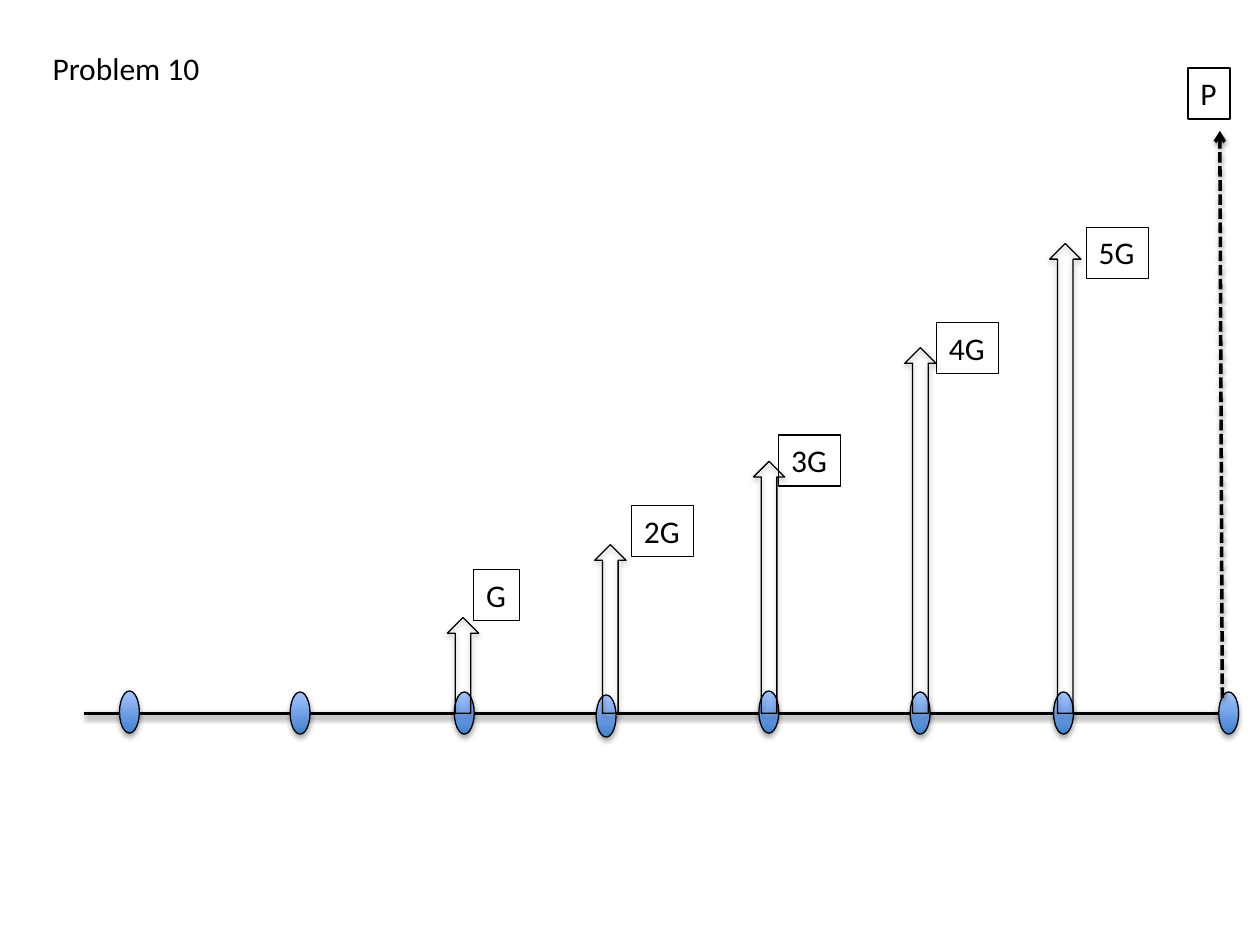
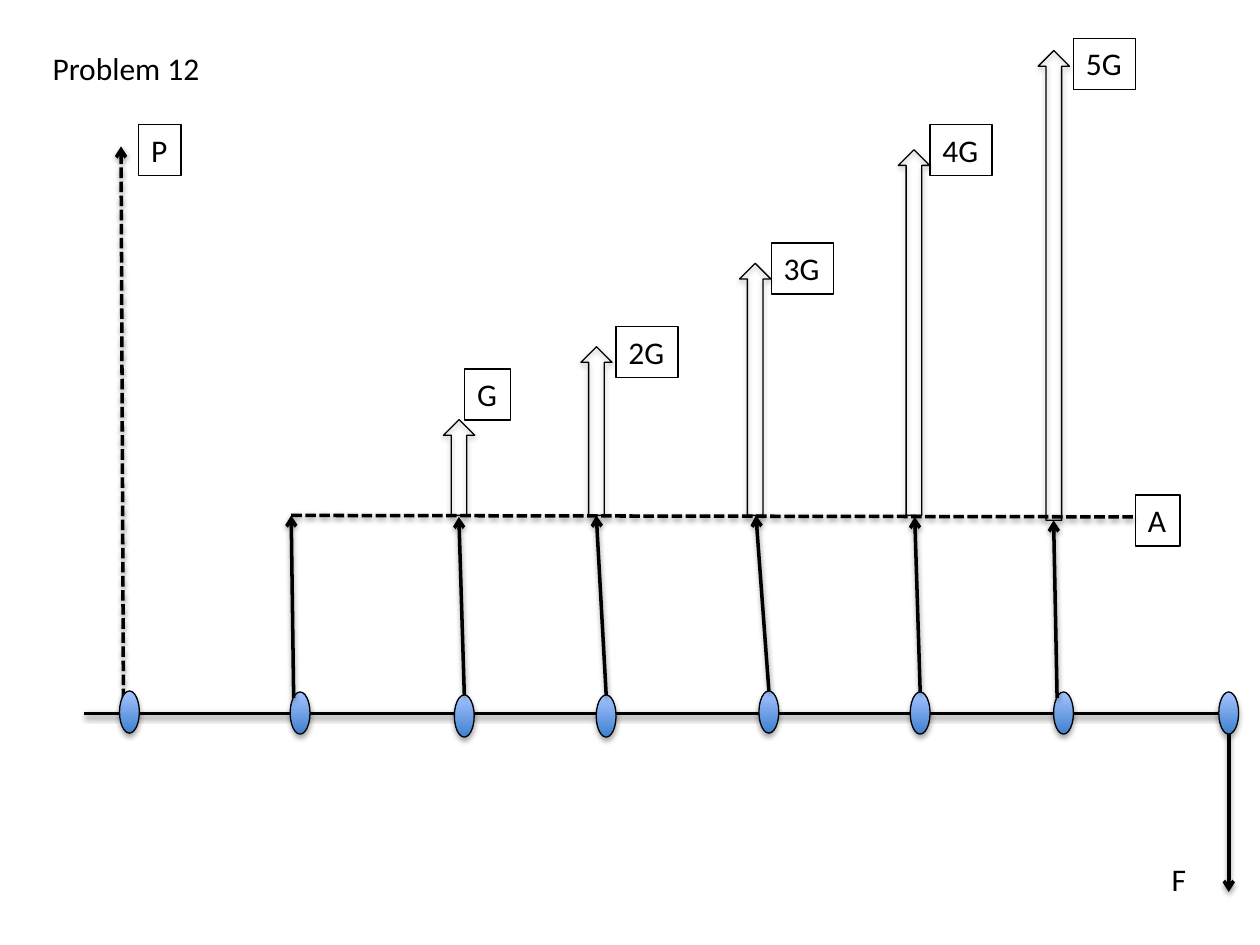
from collections import namedtuple

from lxml import etree
from pptx import Presentation
from pptx.dml.color import RGBColor
from pptx.enum.dml import MSO_LINE
from pptx.enum.shapes import MSO_CONNECTOR, MSO_SHAPE
from pptx.enum.text import MSO_AUTO_SIZE
from pptx.oxml.ns import qn
from pptx.util import Cm, Pt

COLORS = {"ink": "000000", "node_dark": "3F80CE", "node_light": "A4C4FF"}
FONT = "Calibri"
STRAIGHT = MSO_CONNECTOR.STRAIGHT
OVAL, UP_ARROW = MSO_SHAPE.OVAL, MSO_SHAPE.UP_ARROW
DASH = MSO_LINE.SQUARE_DOT
FIT_SHAPE = MSO_AUTO_SIZE.SHAPE_TO_FIT_TEXT
TOP = 0

Box = namedtuple("Box", "x y w h")

TITLE_BOX = Box(0.81, 0.86, 3.51, 1.03)
TIMELINE_BOX = Box(1.7, 13.93, 23.06, 0.85)
NODE_WIDTH = 0.4
NODE_CENTERS = (0.91, 4.35, 7.66, 10.52, 13.8, 16.85, 19.74, 23.07)
LABEL_HEIGHT = 1.03
LABEL_WIDTHS = {"P": 0.85, "G": 0.93, "A": 0.9, "F": 0.81}
MULTIPLE_WIDTH = 1.25
GRADIENT_HEIGHTS = (1.93, 3.4, 5.08, 7.37, 9.47)
GRADIENT_WIDTH = 0.63


def rgb(name):
    """Return a named colour."""
    return RGBColor.from_string(COLORS[name])


def add_shadow(shape, alpha, distance):
    """Give a shape a soft shadow below it."""
    effects = etree.SubElement(shape._element.spPr, qn("a:effectLst"))
    shadow = etree.SubElement(
        effects, qn("a:outerShdw"), blurRad=str(Pt(3.1)), dist=str(Pt(distance)),
        dir="5400000", rotWithShape="0")
    color = etree.SubElement(shadow, qn("a:srgbClr"), val=COLORS["ink"])
    etree.SubElement(color, qn("a:alpha"), val=str(alpha * 1000))


def add_outline(shape):
    """Draw the thin outline that shapes and labels share."""
    shape.line.color.rgb = rgb("ink")
    shape.line.width = Pt(0.75)


def add_text(s, text, box, framed=False):
    """Add one line of text, framed if asked."""
    tb = s.shapes.add_textbox(*map(Cm, box))
    tf = tb.text_frame
    tf.word_wrap = False
    tf.auto_size = FIT_SHAPE
    r = tf.paragraphs[0].add_run()
    r.text = text
    r.font.name, r.font.size = FONT, Pt(18)
    r.font.color.rgb = rgb("ink")
    if framed:
        add_outline(tb)


def add_label(s, text, x, y, framed=True):
    """Add the label of a cash flow."""
    width = LABEL_WIDTHS.get(text, MULTIPLE_WIDTH)
    add_text(s, text, Box(x, y, width, LABEL_HEIGHT), framed)


def add_line(s, x1, y1, x2, y2, dashed=False, arrow=False):
    """Add a shadowed straight line, dashed or with an arrowhead if asked."""
    line = s.shapes.add_connector(STRAIGHT, Cm(x1), Cm(y1), Cm(x2), Cm(y2))
    line.line.color.rgb = rgb("ink")
    line.line.width = Pt(2)
    if dashed:
        line.line.dash_style = DASH
    if arrow:
        etree.SubElement(line.line._get_or_add_ln(), qn("a:tailEnd"), type="arrow")
    add_shadow(line, 38, 1.6)
    return line


def add_outlined_shape(s, kind, box):
    """Add an outlined preset shape with a shadow and no fill."""
    shape = s.shapes.add_shape(kind, *map(Cm, box))
    shape.fill.background()
    add_outline(shape)
    add_shadow(shape, 35, 1.8)
    return shape


def draw_timeline(s, box, node_drops):
    """Draw the time axis and return its nodes."""
    axis_y = box.y + 0.45
    add_line(s, box.x, axis_y, box.x + box.w, axis_y)
    nodes = []
    for center, drop in zip(NODE_CENTERS, node_drops):
        node = add_outlined_shape(s, OVAL, Box(
            box.x + center - NODE_WIDTH / 2, box.y + drop, NODE_WIDTH, box.h))
        node.fill.gradient()
        node.fill.gradient_angle = 90
        for stop, name in zip(node.fill.gradient_stops, ("node_dark", "node_light")):
            stop.color.rgb = rgb(name)
        nodes.append(node)
    return nodes


def draw_gradient(s, box, arrows):
    """Draw G to 5G; each arrow has its left, drop and label offset."""
    for i, (height, arrow) in enumerate(zip(GRADIENT_HEIGHTS, arrows), 1):
        left, drop, dx, dy = arrow
        x, y = box.x + left, box.y + box.h - height + drop
        add_outlined_shape(s, UP_ARROW, Box(x, y, GRADIENT_WIDTH, height))
        add_label(s, f"{i}G" if i > 1 else "G", x + dx, y + dy)


def draw_present(s, box, label_dx, label_dy):
    """Draw the dashed arrow P from the foot to the top of its box."""
    add_line(s, box.x + box.w, box.y + box.h, box.x, box.y, dashed=True, arrow=True)
    add_label(s, "P", box.x + label_dx, box.y + label_dy)


def draw_annuity(s, box, nodes):
    """Draw the dashed level A and the arrows that rise to it from the nodes."""
    add_line(s, box.x, box.y, box.x + box.w, box.y + 0.03, dashed=True)
    tips = ((0, 0), (3.38, 0.03), (6.15, 0), (9.37, 0), (12.57, 0.03), (15.37, 0.1))
    side_starts = {0: 0.05, 5: 15.44}
    for i, (dx, dy) in enumerate(tips):
        start = side_starts.get(i, dx)
        line = add_line(s, box.x + start, box.y + box.h,
                        box.x + dx, box.y + dy, arrow=True)
        if i not in side_starts:
            line.begin_connect(nodes[i], TOP)
    add_label(s, "A", box.x + box.w, box.y - 0.41)


def draw_future(s, box):
    """Draw the arrow F down the right side of its box."""
    right, bottom = box.x + box.w, box.y + box.h
    add_line(s, right, box.y, right, bottom, arrow=True)
    add_label(s, "F", box.x, bottom - 0.76, framed=False)


def add_problem(prs, title):
    """Add a blank slide with its title."""
    s = prs.slides.add_slide(prs.slide_layouts[6])
    add_text(s, title, TITLE_BOX)
    return s


def build_problem_10(prs):
    """Build the slide with a gradient and P at the end."""
    s = add_problem(prs, "Problem 10")
    draw_timeline(s, TIMELINE_BOX, (0, 0.02, 0.02, 0.08, 0, 0.02, 0.02, 0.02))
    draw_gradient(s, Box(9.02, 4.91, 12.77, 9.47), (
        (0, 0, 0.53, -0.97), (2.97, 0, 0.74, -0.79), (6.17, 0, 0.51, -0.53),
        (9.22, 0, 0.64, -0.51), (12.14, 0, 0.74, -0.33)))
    draw_present(s, Box(24.59, 2.64, 0.05, 11.43), -0.64, -1.27)


def build_problem_12(prs):
    """Build the slide with a gradient on an annuity, P and F."""
    s = add_problem(prs, "Problem 12")
    draw_present(s, Box(2.44, 2.95, 0.05, 11.43), 0.36, -0.44)
    nodes = draw_timeline(s, TIMELINE_BOX, (0, 0.02, 0.08, 0.08, 0, 0.02, 0.02, 0.02))
    draw_gradient(s, Box(8.94, 0.92, 12.62, 9.47), (
        (0, 0, 0.43, -1.02), (2.77, 0, 0.71, -0.41), (5.97, 0, 0.64, -0.41),
        (9.17, 0, 0.64, -0.51), (11.99, 0.1, 0.71, -0.25)))
    draw_annuity(s, Box(5.87, 10.39, 17.02, 3.68), nodes[1:7])
    draw_future(s, Box(23.37, 14.8, 1.4, 3.18))


def main():
    """Build and save the presentation."""
    prs = Presentation()
    prs.slide_width, prs.slide_height = Cm(25.4), Cm(19.05)
    build_problem_10(prs)
    build_problem_12(prs)
    prs.save("out.pptx")


if __name__ == "__main__":
    main()
